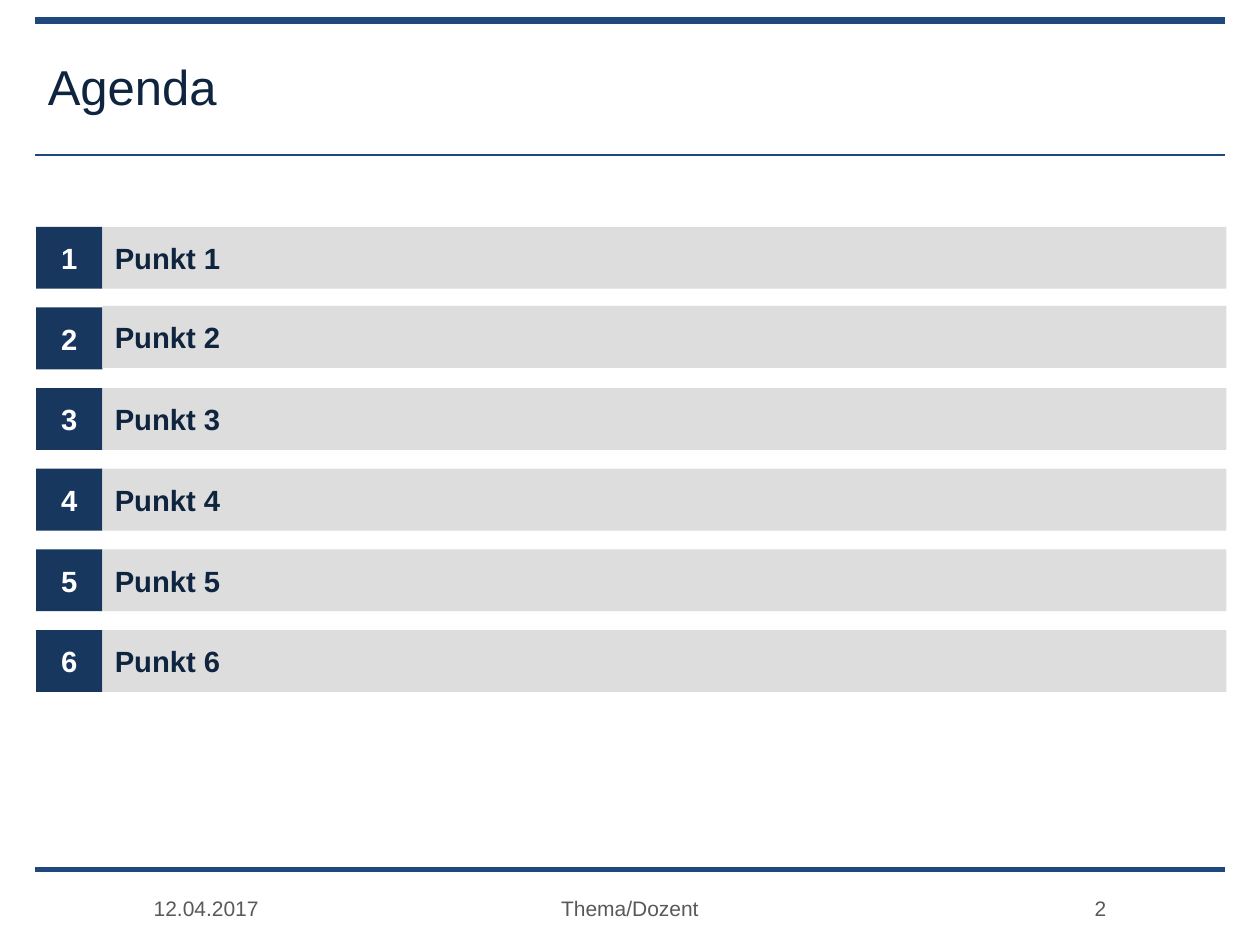
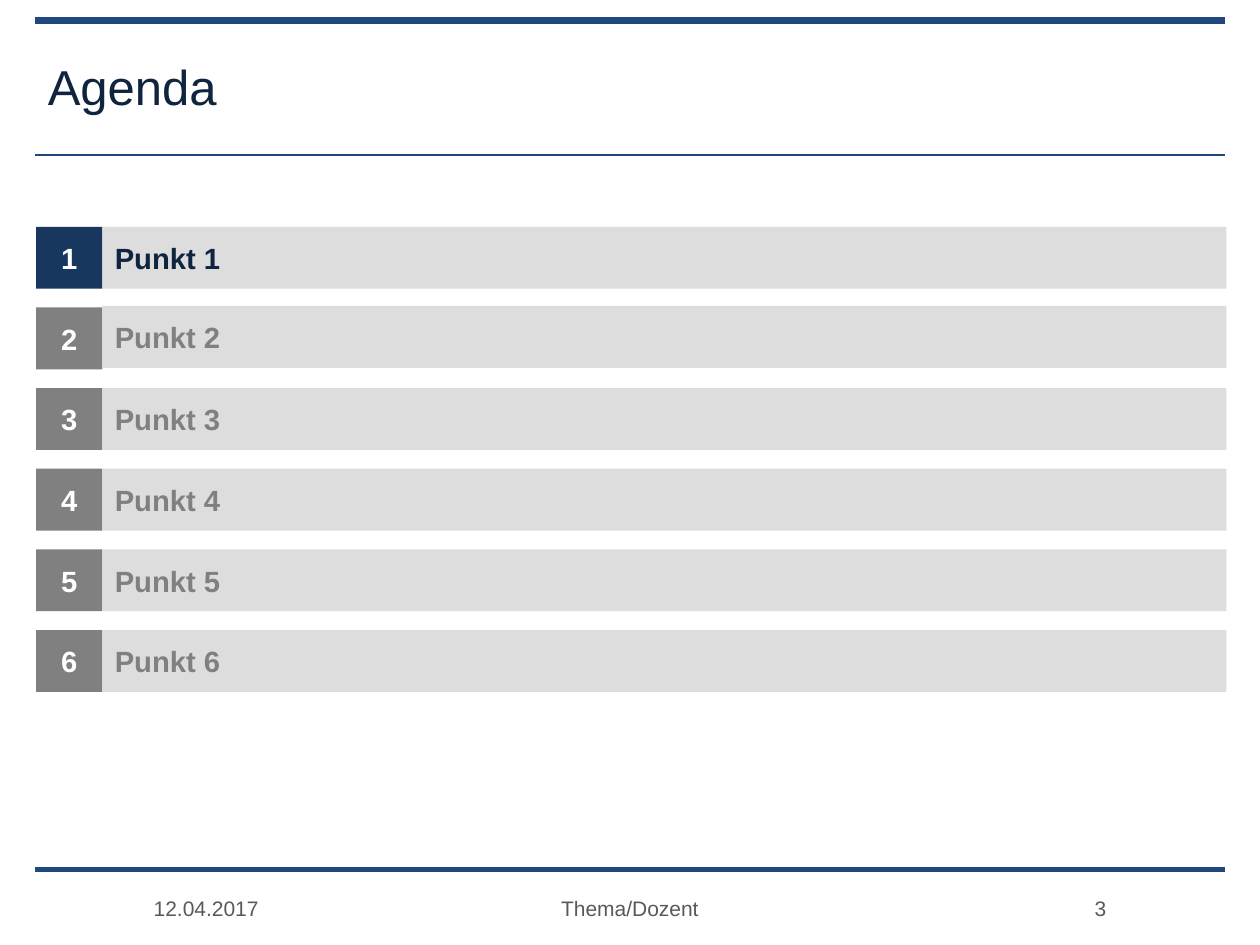
from dataclasses import dataclass

from pptx import Presentation
from pptx.dml.color import RGBColor
from pptx.enum.shapes import MSO_CONNECTOR as Connector, MSO_SHAPE as Preset
from pptx.enum.text import MSO_ANCHOR as Anchor, MSO_AUTO_SIZE as AutoSize, PP_ALIGN as Align
from pptx.oxml.ns import qn
from pptx.slide import Slide
from pptx.text.text import TextFrame
from pptx.util import Pt
from lxml.etree import SubElement

# Shared look
FONT = "Arial"
RULE_BLUE, NAVY, INK = "1F497D", "17375E", "0F243E"
MUTED, BAR_GREY, FOOTER_GREY, WHITE = "808080", "DDDDDD", "595959", "FFFFFF"

# Agenda grid, in points
ROW_TOP, ROW_PITCH, ROW_HEIGHT = 129.6, 46.08, 35.4
NUMBER_LEFT, NUMBER_WIDTH = 20.6, 37.9
BAR_LEFT, BAR_WIDTH = 58.5, 642.3


@dataclass(frozen=True)
class Box:
    left: float
    top: float
    width: float
    height: float

    def lengths(self) -> tuple:
        return Pt(self.left), Pt(self.top), Pt(self.width), Pt(self.height)


@dataclass(frozen=True)
class Rule:
    top: float
    weight: float


@dataclass(frozen=True)
class TextStyle:
    size: float
    color: str
    align: Align = Align.LEFT
    bold: bool = False


@dataclass(frozen=True)
class AgendaItem:
    label: str
    bar_rise: float = 0


@dataclass(frozen=True)
class FooterField:
    text: str
    box: Box
    align: Align


RULES = [Rule(496.8, 2.5), Rule(11.52, 4), Rule(88.56, 1)]
TITLE_BOX = Box(20.16, 11.52, 680.4, 75.6)
TITLE_STYLE = TextStyle(28, INK)
ITEMS = [
    AgendaItem("Punkt 1"),
    AgendaItem("Punkt 2", bar_rise=0.9),
    AgendaItem("Punkt 3"),
    AgendaItem("Punkt 4"),
    AgendaItem("Punkt 5"),
    AgendaItem("Punkt 6"),
]


def rgb(color: str) -> RGBColor:
    return RGBColor.from_string(color)


def write(frame: TextFrame, text: str, style: TextStyle, margin: float | None = None) -> None:
    """Put one formatted paragraph into a vertically centred frame."""
    settings = {"word_wrap": True, "auto_size": AutoSize.NONE, "vertical_anchor": Anchor.MIDDLE}
    if margin is not None:
        for side in ("left", "top", "right", "bottom"):
            settings[f"margin_{side}"] = Pt(margin)
    for name, value in settings.items():
        setattr(frame, name, value)

    para = frame.paragraphs[0]
    para.alignment = style.align
    span = para.add_run()
    span.text = text
    for name, value in {"name": FONT, "size": Pt(style.size), "bold": style.bold}.items():
        setattr(span.font, name, value)
    span.font.color.rgb = rgb(style.color)


def add_rule(page: Slide, rule: Rule) -> None:
    line = page.shapes.add_connector(
        Connector.STRAIGHT, Pt(20.16), Pt(rule.top), Pt(699.84), Pt(rule.top))
    line.line.color.rgb = rgb(RULE_BLUE)
    line.line.width = Pt(rule.weight)
    SubElement(line._element.spPr, qn("a:effectLst"))


def add_block(page: Slide, box: Box, fill: str, text: str, style: TextStyle) -> None:
    block = page.shapes.add_shape(Preset.RECTANGLE, *box.lengths())
    block.shadow.inherit = False
    block.fill.solid()
    block.fill.fore_color.rgb = rgb(fill)
    block.line.fill.background()
    write(block.text_frame, text, style)


def add_title(page: Slide, text: str) -> None:
    title = page.shapes.title
    title.left, title.top, title.width, title.height = TITLE_BOX.lengths()
    write(title.text_frame, text, TITLE_STYLE)


def add_footer(page: Slide, page_number: int) -> None:
    fields = [
        FooterField("12.04.2017", Box(87.84, 502.56, 129.6, 33.12), Align.LEFT),
        FooterField(str(page_number), Box(502.56, 502.56, 129.6, 33.12), Align.RIGHT),
        FooterField("Thema/Dozent", Box(218.16, 502.56, 283.68, 33.12), Align.CENTER),
    ]
    for field in fields:
        box = page.shapes.add_textbox(*field.box.lengths())
        write(box.text_frame, field.text, TextStyle(12, FOOTER_GREY, field.align), margin=0)


def add_agenda(page: Slide, active: set[int]) -> None:
    """Draw every item; those outside the active set are greyed out."""
    for number, item in enumerate(ITEMS, start=1):
        top = ROW_TOP + (number - 1) * ROW_PITCH
        number_fill, label_color = (NAVY, INK) if number in active else (MUTED, MUTED)
        add_block(page, Box(NUMBER_LEFT, top, NUMBER_WIDTH, ROW_HEIGHT), number_fill,
                  str(number), TextStyle(16.7, WHITE, Align.CENTER, bold=True))
        add_block(page, Box(BAR_LEFT, top - item.bar_rise, BAR_WIDTH, ROW_HEIGHT), BAR_GREY,
                  item.label, TextStyle(16.7, label_color, bold=True))


def main() -> None:
    deck = Presentation()
    deck.slide_width, deck.slide_height = Pt(720), Pt(540)
    title_only = deck.slide_layouts[5]

    # Overview first, then the first item highlighted
    all_items = set(range(1, len(ITEMS) + 1))
    for page_number, active in enumerate([all_items, {1}], start=2):
        page = deck.slides.add_slide(title_only)
        for rule in RULES:
            add_rule(page, rule)
        add_title(page, "Agenda")
        add_footer(page, page_number)
        add_agenda(page, active)

    deck.save("out.pptx")


if __name__ == "__main__":
    main()
